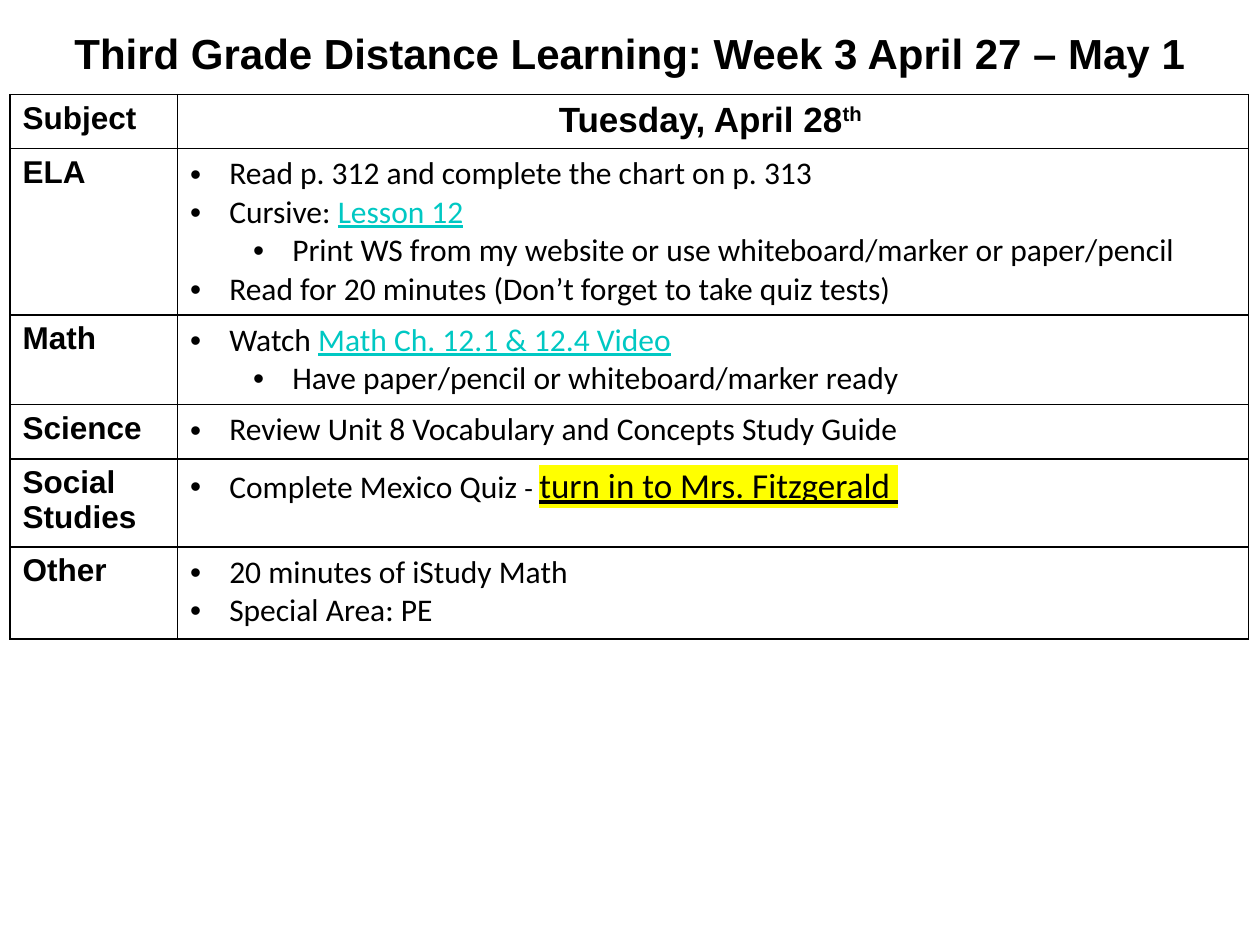
from dataclasses import dataclass

from lxml.etree import SubElement as Sub
from pptx import Presentation
from pptx.dml.color import RGBColor as RGB
from pptx.enum.text import PP_ALIGN as Align
from pptx.oxml.ns import qn
from pptx.util import Inches, Pt


@dataclass(frozen=True)
class Theme:
    head: str = "Arial"
    body: str = "Calibri"
    ink: str = "000000"
    paper: str = "FFFFFF"
    link: str = "00C8C3"
    mark: str = "FFFF00"
    title: int = 24
    day: int = 20
    text: int = 18
    small: int = 16
    rule: int = 1


LOOK = Theme()
COLS = [1.33, 8.5]
ROWS = [0.43, 1.17, 0.68, 0.43, 0.7, 0.73]
LINK = {"color": LOOK.link, "line": True}
TURN_IN = {"size": LOOK.day, "line": True, "mark": LOOK.mark}

# Each subject has bullets: (level, runs), each run being (words, style).
PLAN = [
    ("ELA", [
        (0, [("Read p. 312 and complete the chart on p. 313", {})]),
        (0, [("Cursive: ", {}), ("Lesson 12", LINK)]),
        (1, [("Print WS from my website or use whiteboard/marker or paper/pencil", {})]),
        (0, [("Read for 20 minutes (Don’t forget to take quiz tests)", {})]),
    ]),
    ("Math", [
        (0, [("Watch ", {}), ("Math Ch. 12.1 & 12.4 Video", LINK)]),
        (1, [("Have paper/pencil or whiteboard/marker ready", {})]),
    ]),
    ("Science", [
        (0, [("Review Unit 8 Vocabulary and Concepts Study Guide", {})]),
    ]),
    ("Social Studies", [
        (0, [("Complete Mexico Quiz ", {}), ("- ", {"size": LOOK.small}),
             ("turn in to Mrs. Fitzgerald ", TURN_IN)]),
    ]),
    ("Other", [
        (0, [("20 minutes of iStudy Math", {})]),
        (0, [("Special Area: PE", {})]),
    ]),
]


def add_run(para, words, size=LOOK.text, face=LOOK.body, color=LOOK.ink,
            bold=False, line=False, mark=None, raised=False):
    run = para.add_run()
    run.text = words
    font = run.font
    font.size, font.bold, font.underline = Pt(size), bold, line
    font.color.rgb = RGB.from_string(color)
    props = run._r.get_or_add_rPr()
    if mark:
        light = Sub(props, qn("a:highlight"))
        Sub(light, qn("a:srgbClr"), val=mark)
    if raised:
        props.set("baseline", "30000")
    font.name = face


def add_head(para, words, **style):
    add_run(para, words, face=LOOK.head, bold=True, **style)


def set_bullet(para, level):
    para.level = level
    props = para._p.get_or_add_pPr()
    props.set("marL", str(Inches(0.31 + 0.5 * level)))
    props.set("indent", str(Inches(-0.31)))
    Sub(props, qn("a:buFont"), typeface=LOOK.head)
    Sub(props, qn("a:buChar"), char="•")


def add_bullets(cell, items):
    frame = cell.text_frame
    for i, (level, runs) in enumerate(items):
        para = frame.add_paragraph() if i else frame.paragraphs[0]
        set_bullet(para, level)
        for words, style in runs:
            add_run(para, words, **style)


def style_cell(cell):
    """Rule all four sides, then fill the cell."""
    props = cell._tc.get_or_add_tcPr()
    for side in "LRTB":
        edge = Sub(props, qn(f"a:ln{side}"), w=str(Pt(LOOK.rule)))
        fill = Sub(edge, qn("a:solidFill"))
        Sub(fill, qn("a:srgbClr"), val=LOOK.ink)
    cell.fill.solid()
    cell.fill.fore_color.rgb = RGB.from_string(LOOK.paper)


def add_plan(slide):
    table = slide.shapes.add_table(
        len(ROWS), len(COLS), Inches(0.08), Inches(0.75),
        Inches(sum(COLS)), Inches(sum(ROWS))).table
    table.first_row = table.horz_banding = False
    for col, width in zip(table.columns, COLS):
        col.width = Inches(width)
    for row, height in zip(table.rows, ROWS):
        row.height = Inches(height)
    for cell in table.iter_cells():
        style_cell(cell)

    add_head(table.cell(0, 0).text_frame.paragraphs[0], "Subject")
    day = table.cell(0, 1).text_frame.paragraphs[0]
    day.alignment = Align.CENTER
    add_head(day, "Tuesday, April 28", size=LOOK.day)
    add_head(day, "th ", size=LOOK.day, raised=True)
    for i, (name, items) in enumerate(PLAN, 1):
        add_head(table.cell(i, 0).text_frame.paragraphs[0], name)
        add_bullets(table.cell(i, 1), items)


def add_title(slide, words):
    box = slide.shapes.add_textbox(0, Inches(0.17), Inches(10), Inches(0.5))
    box.text_frame.word_wrap = True
    para = box.text_frame.paragraphs[0]
    para.alignment = Align.CENTER
    add_head(para, words, size=LOOK.title)


def main():
    deck = Presentation()
    deck.slide_width, deck.slide_height = Inches(10), Inches(7.5)
    slide = deck.slides.add_slide(deck.slide_layouts[6])
    add_plan(slide)
    add_title(slide, "Third Grade Distance Learning: Week 3 April 27 – May 1")
    deck.save("out.pptx")


if __name__ == "__main__":
    main()
